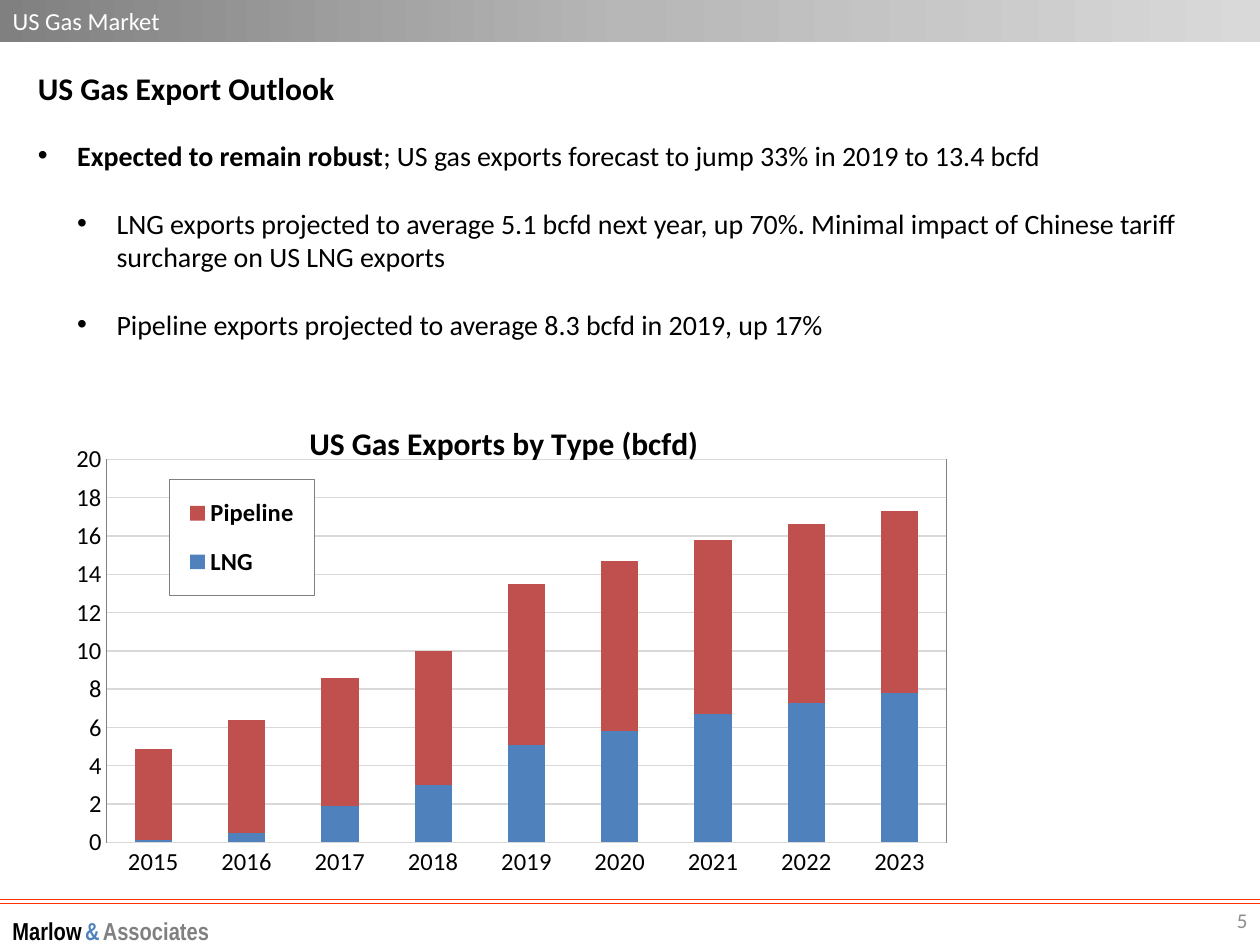
from copy import deepcopy

from pptx import Presentation
from pptx.chart.data import CategoryChartData
from pptx.dml.color import RGBColor
from pptx.enum.chart import XL_CHART_TYPE, XL_LEGEND_POSITION, XL_TICK_MARK
from pptx.enum.shapes import MSO_CONNECTOR
from pptx.enum.text import MSO_ANCHOR, MSO_AUTO_SIZE, PP_ALIGN
from pptx.oxml import parse_xml
from pptx.oxml.ns import nsdecls, qn
from pptx.oxml.xmlchemy import OxmlElement
from pptx.util import Pt

COLORS = {
    "black": "000000", "white": "FFFFFF", "grey": "808080", "mid": "B7B7B7",
    "light": "D9D9D9", "number": "8C8C8C", "rule": "FF3300",
    "LNG": "4F81BD", "Pipeline": "C0504D",
}


def write(para, text, size=16, color="black", bold=False, font="Calibri"):
    span = para.add_run()
    span.text = text
    span.font.size = Pt(size)
    span.font.name = font
    span.font.bold = bold
    span.font.color.rgb = RGBColor.from_string(COLORS[color])


def place_and_outline(element, index, layout, fill, target=""):
    """Give a chart part a manual layout, a fill and a grey outline."""
    for old in element.findall(qn("c:layout")):
        element.remove(old)
    modes = "".join(f'<c:{axis}Mode val="edge"/>' for axis in "xy")
    sizes = "".join(f'<c:{key} val="{value}"/>' for key, value in zip("xywh", layout))
    element.insert(index, parse_xml(
        f'<c:layout {nsdecls("c")}><c:manualLayout>{target}{modes}{sizes}'
        "</c:manualLayout></c:layout>"))
    outline = parse_xml(
        f'<c:spPr {nsdecls("c", "a")}>{fill}<a:ln w="9525"><a:solidFill>'
        f'<a:srgbClr val="{COLORS["grey"]}"/></a:solidFill></a:ln></c:spPr>')
    text_format = element.find(qn("c:txPr"))
    if text_format is None:
        element.append(outline)
    else:
        text_format.addprevious(outline)


deck = Presentation()
deck.slide_width, deck.slide_height = Pt(720), Pt(540)
page = deck.slides.add_slide(deck.slide_layouts[1])

# Header bar
header = page.shapes.title
header.left, header.top, header.width, header.height = Pt(0), Pt(0), Pt(720), Pt(24)
header.fill.gradient()
header.fill.gradient_angle = 0
stops = header.fill.gradient_stops
stops[0]._gs.addnext(deepcopy(stops[0]._gs))
for stop, position, name in zip(header.fill.gradient_stops, (0, 0.5, 1), ("grey", "mid", "light")):
    stop.position = position
    stop.color.rgb = RGBColor.from_string(COLORS[name])
header.text_frame.auto_size = MSO_AUTO_SIZE.NONE
header.text_frame.vertical_anchor = MSO_ANCHOR.MIDDLE
para = header.text_frame.paragraphs[0]
para.alignment = PP_ALIGN.LEFT
write(para, "US Gas Market", size=14, color="white")

# Outlook heading and bullets: indent level, space before, spans
outlook = [
    (0, 0, [("US Gas Export Outlook", {"size": 18, "bold": True})]),
    (1, 18, [("Expected to remain robust", {"bold": True}),
             ("; US gas exports forecast to jump 33% in 2019 to 13.4 bcfd", {})]),
    (2, 19.5, [("LNG exports projected to average 5.1 bcfd next year, up 70%. "
                "Minimal impact of Chinese tariff surcharge on US LNG exports", {})]),
    (2, 19.5, [("Pipeline exports projected to average 8.3 bcfd in 2019, up 17%", {})]),
]
body = page.placeholders[1]
body.left, body.top, body.width, body.height = Pt(14.4), Pt(36), Pt(687.6), Pt(186)
frame = body.text_frame
frame.auto_size = MSO_AUTO_SIZE.NONE
frame.vertical_anchor = MSO_ANCHOR.TOP
for number, (level, gap, spans) in enumerate(outlook):
    para = frame.add_paragraph() if number else frame.paragraphs[0]
    para.line_spacing = 1.0
    para.space_before, para.space_after = Pt(gap), Pt(0)
    properties = para._p.get_or_add_pPr()
    properties.set("marL", str(Pt(22.5 * level)))
    properties.set("indent", str(Pt(-22.5 if level else 0)))
    if level:
        bullet_font = OxmlElement("a:buFont")
        bullet_font.set("typeface", "Arial")
        bullet = OxmlElement("a:buChar")
        bullet.set("char", "•")
        properties.extend([bullet_font, bullet])
    else:
        properties.append(OxmlElement("a:buNone"))
    for text, style in spans:
        write(para, text, **style)

# Export chart
data = CategoryChartData(number_format="#,##0")
data.categories = [str(year) for year in range(2015, 2024)]
data.add_series("LNG", (0.1, 0.5, 1.9, 3, 5.1, 5.8, 6.7, 7.3, 7.8))
data.add_series("Pipeline", (4.8, 5.9, 6.7, 7, 8.4, 8.9, 9.1, 9.3, 9.5))
chart = page.shapes.add_chart(
    XL_CHART_TYPE.COLUMN_STACKED, Pt(30), Pt(228), Pt(516), Pt(288), data).chart
chart.font.name = "Calibri"
chart.font.size = Pt(10)
chart.font.color.rgb = RGBColor.from_string(COLORS["black"])
chart.has_title = True
write(chart.chart_title.text_frame.paragraphs[0], "US Gas Exports by Type (bcfd)",
      size=18, bold=True)

plot = chart.plots[0]
plot.gap_width, plot.overlap, plot.vary_by_categories = 150, 100, False
for series in plot.series:
    series.format.fill.solid()
    series.format.fill.fore_color.rgb = RGBColor.from_string(COLORS[series.name])

values = chart.value_axis
values.minimum_scale, values.maximum_scale, values.major_unit = 0, 20, 2
values.tick_labels.number_format = "#,##0"
values.tick_labels.number_format_is_linked = False
for axis in (chart.category_axis, values):
    axis.major_tick_mark = axis.minor_tick_mark = XL_TICK_MARK.NONE
    axis.tick_labels.font.size = Pt(14)
    axis.tick_labels.font.bold = False
values.format.line.fill.background()
for line in (chart.category_axis.format.line, values.major_gridlines.format.line):
    line.color.rgb = RGBColor.from_string(COLORS["light"])
    line.width = Pt(0.75)

chart.has_legend = True
legend = chart.legend
legend.position = XL_LEGEND_POSITION.RIGHT
legend.include_in_layout = False
legend.font.size = Pt(14)
legend.font.bold = True
white_fill = f'<a:solidFill><a:srgbClr val="{COLORS["white"]}"/></a:solidFill>'
place_and_outline(legend._element, 1, (0.13, 0.16, 0.16, 0.23), white_fill)
place_and_outline(chart._chartSpace.chart.plotArea, 0, (0.06, 0.12, 0.93, 0.76),
                  "<a:noFill/>", '<c:layoutTarget val="inner"/>')

# Footer
for height in (514.1, 516.2):
    rule = page.shapes.add_connector(
        MSO_CONNECTOR.STRAIGHT, Pt(0), Pt(height), Pt(720), Pt(height))
    rule.line.color.rgb = RGBColor.from_string(COLORS["rule"])
    rule.line.width = Pt(0.75)
    rule._element.spPr.append(OxmlElement("a:effectLst"))

firm = [("Marlow", 14, "black", True), (" ", 8, "black", False), ("&", 14, "LNG", True),
        (" ", 8, "black", False), ("Associates", 14, "grey", True)]
footers = [
    ((0, 522, 312, 19.4), PP_ALIGN.LEFT, "Arial Narrow", firm),
    ((552, 511.2, 168, 28.8), PP_ALIGN.RIGHT, "Calibri", [("5", 12, "number", False)]),
]
for place, alignment, font, spans in footers:
    box = page.shapes.add_textbox(*map(Pt, place))
    box.text_frame.word_wrap = True
    box.text_frame.vertical_anchor = MSO_ANCHOR.MIDDLE
    para = box.text_frame.paragraphs[0]
    para.alignment = alignment
    for text, size, color, bold in spans:
        write(para, text, size=size, color=color, bold=bold, font=font)

deck.save("out.pptx")
